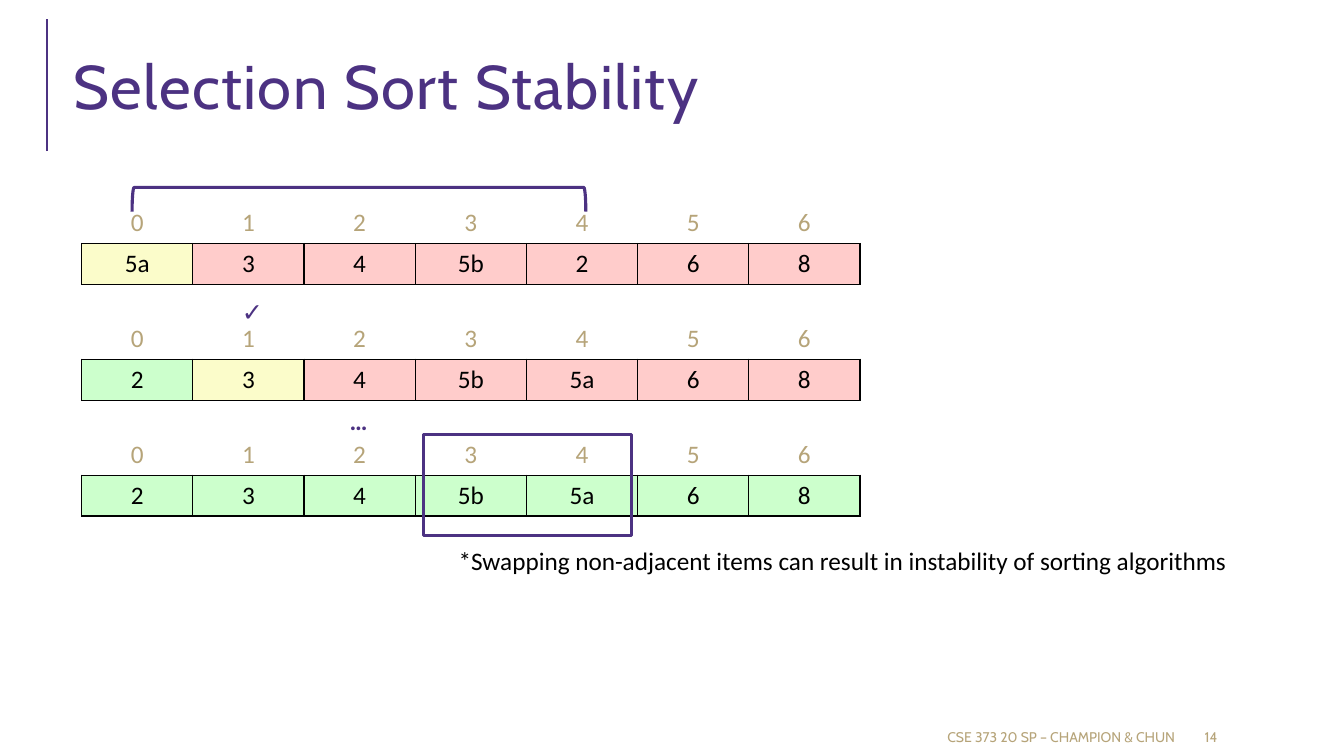
"""Build the Selection Sort Stability slide: three array states with their annotations."""
from lxml.etree import SubElement
from pptx import Presentation
from pptx.dml.color import RGBColor
from pptx.enum.shapes import MSO_CONNECTOR, MSO_SHAPE as SHAPE
from pptx.enum.text import MSO_ANCHOR as ANCHOR, PP_ALIGN as ALIGN
from pptx.oxml.ns import qn
from pptx.util import Inches, Pt

PURPLE = RGBColor(0x4C, 0x32, 0x82)
GOLD = RGBColor(0xB6, 0xA4, 0x79)
BLACK = RGBColor(0, 0, 0)
WHITE = RGBColor(0xFF, 0xFF, 0xFF)
SORTED = RGBColor(0xCC, 0xFF, 0xCC)
CURRENT = RGBColor(0xFB, 0xFC, 0xCA)
UNSORTED = RGBColor(0xFF, 0xCC, 0xCB)


def write(frame, text, size, color, font="Calibri", align=ALIGN.LEFT, bold=False):
    paragraph = frame.paragraphs[0]
    paragraph.alignment = align
    run = paragraph.add_run()
    run.text = text
    run.font.name, run.font.size, run.font.bold = font, Pt(size), bold
    run.font.color.rgb = color
    return run


def add_label(box, text, size, color, anchor=ANCHOR.TOP, wrap=False, **style):
    frame = slide.shapes.add_textbox(*map(Inches, box)).text_frame
    frame.word_wrap = wrap
    frame.vertical_anchor = anchor
    return write(frame, text, size, color, **style)


prs = Presentation()
prs.slide_width, prs.slide_height = Inches(13.33), Inches(7.5)
slide = prs.slides.add_slide(prs.slide_layouts[6])

title_rule = slide.shapes.add_connector(
    MSO_CONNECTOR.STRAIGHT, Inches(0.47), Inches(1.5), Inches(0.47), Inches(0.19))
title_rule.line.color.rgb = PURPLE
title_rule.line.width = Pt(1.5)
SubElement(title_rule._element.spPr, qn("a:effectLst"))

title = add_label((0.63, 0.29, 12.23, 1.11), "Selection Sort Stability", 44, PURPLE,
                  ANCHOR.MIDDLE, True, font="Cabin")
title._r.get_or_add_rPr().set("spc", "100")
add_label((11.85, 7.16, 1.06, 0.3), "14", 10, GOLD, ANCHOR.MIDDLE, True, font="Cabin")
add_label((5.3, 7.16, 6.45, 0.3), "CSE 373 20 SP – CHAMPION & CHUN", 10, GOLD,
          ANCHOR.MIDDLE, True, font="Cabin", align=ALIGN.RIGHT)

passes = [
    (["5a", "3", "4", "5b", "2", "6", "8"], [CURRENT] + [UNSORTED] * 6),
    (["2", "3", "4", "5b", "5a", "6", "8"], [SORTED, CURRENT] + [UNSORTED] * 5),
    (["2", "3", "4", "5b", "5a", "6", "8"], [SORTED] * 7),
]
for step, (items, states) in enumerate(passes):
    array = slide.shapes.add_table(2, len(items), Inches(0.81), Inches(2.01 + 1.15 * step),
                                   Inches(7.72), Inches(0.81)).table
    array.first_row = array.horz_banding = False
    for column, (item, state) in enumerate(zip(items, states)):
        for row, (text, color) in enumerate([(str(column), GOLD), (item, BLACK)]):
            cell = array.cell(row, column)
            cell.vertical_anchor = ANCHOR.MIDDLE
            write(cell.text_frame, text, 18, color, align=ALIGN.CENTER)
            for side in "LRTB":
                border = SubElement(cell._tc.get_or_add_tcPr(), qn(f"a:ln{side}"), w=str(Pt(1)))
                edge = BLACK if row or side == "B" else WHITE
                SubElement(SubElement(border, qn("a:solidFill")), qn("a:srgbClr"), val=str(edge))
            if row:
                cell.fill.solid()
                cell.fill.fore_color.rgb = state
            else:
                cell.fill.background()

add_label((2.3, 2.89, 0.39, 0.4), "✓", 18, PURPLE, bold=True)
add_label((3.37, 3.97, 0.38, 0.4), "…", 18, PURPLE, bold=True)
add_label((4.45, 5.36, 7.89, 0.4),
          "*Swapping non-adjacent items can result in instability of sorting algorithms", 18, BLACK)

outlines = [
    (SHAPE.LEFT_BRACKET, (3.44, -0.27, 0.24, 4.5), 90),
    (SHAPE.RECTANGLE, (4.2, 4.31, 2.06, 1), 0),
]
for preset, box, rotation in outlines:
    outline = slide.shapes.add_shape(preset, *map(Inches, box))
    outline.rotation = rotation
    outline.shadow.inherit = False
    outline.fill.background()
    outline.line.color.rgb = PURPLE
    outline.line.width = Pt(2.25)

prs.save("out.pptx")
